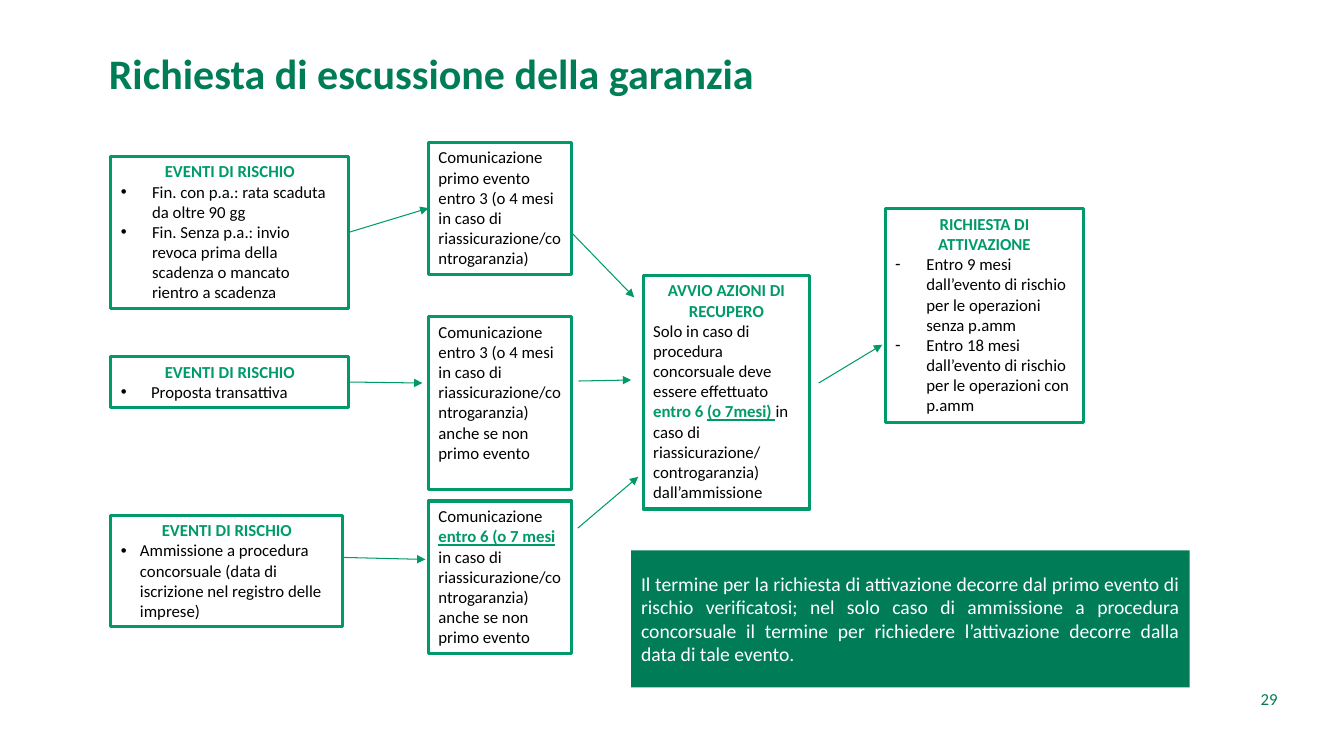
from lxml import etree
from pptx import Presentation
from pptx.dml.color import RGBColor
from pptx.enum.shapes import MSO_CONNECTOR, MSO_SHAPE
from pptx.enum.text import MSO_ANCHOR, PP_ALIGN
from pptx.oxml.ns import qn
from pptx.util import Inches, Pt

RECTANGLE, STRAIGHT = MSO_SHAPE.RECTANGLE, MSO_CONNECTOR.STRAIGHT
TOP, MIDDLE, BOTTOM = MSO_ANCHOR.TOP, MSO_ANCHOR.MIDDLE, MSO_ANCHOR.BOTTOM
LEFT, CENTER, RIGHT, JUSTIFY = PP_ALIGN.LEFT, PP_ALIGN.CENTER, PP_ALIGN.RIGHT, PP_ALIGN.JUSTIFY
LEFT_SIDE, RIGHT_SIDE = 1, 3

FONT = "Calibri"
GREEN, DARK, BLACK, WHITE = "009A6A", "007D57", "000000", "FFFFFF"

TITLE = "Richiesta di escussione della garanzia"
PAGE_NUMBER = "29"
NOTE = ("Il termine per la richiesta di attivazione decorre dal primo evento di rischio "
        "verificatosi; nel solo caso di ammissione a procedura concorsuale il termine per "
        "richiedere l’attivazione decorre dalla data di tale evento.")

# Columns of the flow: left edge and width
EVENT, NOTICE, RECOVERY, REQUEST = (1.1, 2.36), (4.25, 1.42), (6.38, 1.65), (8.78, 1.97)

# name: (column, top, height, heading, bullet, hanging indent, paragraphs)
# A paragraph is a list of runs: (text, highlighted, underlined)
BOXES = {
    "overdue": (EVENT, 1.55, 1.51, "EVENTI DI RISCHIO", "•", 0.31, [
        [("Fin. con p.a.: rata scaduta da oltre 90 gg", False, False)],
        [("Fin. Senza p.a.: invio revoca prima della scadenza o mancato rientro a scadenza",
          False, False)]]),
    "settlement": (EVENT, 3.54, 0.5, "EVENTI DI RISCHIO", "•", 0.3, [
        [("Proposta transattiva", False, False)]]),
    "insolvency": (EVENT[:1] + (2.3,), 5.11, 1.11, "EVENTI DI RISCHIO", "•", 0.19, [
        [("Ammissione a procedura concorsuale (data di iscrizione nel registro delle imprese)",
          False, False)]]),
    "first notice": (NOTICE, 1.41, 1.31, None, None, 0, [
        [("Comunicazione primo evento entro 3 (o 4 mesi in caso di "
          "riassicurazione/controgaranzia)", False, False)]]),
    "second notice": (NOTICE, 3.14, 1.72, None, None, 0, [
        [("Comunicazione entro 3 (o 4 mesi in caso di riassicurazione/controgaranzia) "
          "anche se non primo evento", False, False)]]),
    "third notice": (NOTICE, 4.97, 1.51, None, None, 0, [
        [("Comunicazione ", False, False), ("entro 6 (o 7 mesi ", True, True),
         ("in caso di riassicurazione/controgaranzia) anche se non primo evento",
          False, False)]]),
    "recovery": (RECOVERY, 2.73, 2.32, "AVVIO AZIONI DI RECUPERO", None, 0, [
        [("Solo in caso di procedura concorsuale deve essere effettuato ", False, False),
         ("entro 6 ", True, False), ("(o 7mesi) ", True, True),
         ("in caso di riassicurazione/ controgaranzia) dall’ammissione", False, False)]]),
    "request": (REQUEST, 2.07, 2.12, "RICHIESTA DI ATTIVAZIONE", "-", 0.31, [
        [("Entro 9 mesi dall’evento di rischio per le operazioni senza p.amm", False, False)],
        [("Entro 18 mesi dall’evento di rischio per le operazioni con p.amm", False, False)]]),
}

# Each end is a box name (joined to its side) or a free point
ARROWS = [
    ("overdue", "first notice"),
    ("settlement", (4.19, 3.8)),
    ((3.4, 5.53), (4.22, 5.55)),
    ((5.73, 5.24), (6.33, 4.73)),
    ((5.74, 3.78), (6.26, 3.77)),
    ((5.68, 2.32), (6.29, 2.95)),
    ((8.12, 3.8), (8.75, 3.42)),
]


def rgb(color):
    return RGBColor.from_string(color)


def set_font(font, size, color, bold=False):
    font.name, font.size, font.bold = FONT, Pt(size), bold
    font.color.rgb = rgb(color)


def write_line(frame, text, size, color, align, anchor, bold=False):
    """Fill a text frame with one evenly styled paragraph."""
    frame.word_wrap, frame.vertical_anchor = True, anchor
    para = frame.paragraphs[0]
    para.text, para.alignment = text, align
    set_font(para.font, size, color, bold)


def add_box(shapes, left, top, width, height):
    box = shapes.add_shape(RECTANGLE, *map(Inches, (left, top, width, height)))
    box.shadow.inherit = False
    return box


def add_bullet(para, bullet, indent):
    properties = para._p.get_or_add_pPr()
    properties.set("marL", str(Inches(indent)))
    properties.set("indent", str(-Inches(indent)))
    font = etree.SubElement(properties, qn("a:buFont"))
    font.set("typeface", "Arial")
    etree.SubElement(properties, qn("a:buChar")).set("char", bullet)


def add_flow_box(shapes, column, top, height, heading, bullet, indent, paragraphs):
    box = add_box(shapes, column[0], top, column[1], height)
    box.fill.background()
    box.line.color.rgb, box.line.width = rgb(GREEN), Pt(2.25)
    frame = box.text_frame
    frame.word_wrap, frame.vertical_anchor = True, TOP
    if heading:
        write_line(frame, heading, 12, GREEN, CENTER, TOP, bold=True)
    for number, runs in enumerate(paragraphs):
        para = frame.add_paragraph() if heading or number else frame.paragraphs[0]
        para.alignment = LEFT
        if bullet:
            add_bullet(para, bullet, indent)
        set_font(para.font, 12, BLACK)
        for text, highlighted, underlined in runs:
            span = para.add_run()
            span.text = text
            set_font(span.font, 12, GREEN if highlighted else BLACK, highlighted)
            span.font.underline = underlined
    return box


def add_arrow(shapes, boxes, start, end):
    points = [(0, 0) if isinstance(point, str) else point for point in (start, end)]
    arrow = shapes.add_connector(STRAIGHT, *(Inches(value) for point in points for value in point))
    if start in boxes:
        arrow.begin_connect(boxes[start], RIGHT_SIDE)
    if end in boxes:
        arrow.end_connect(boxes[end], LEFT_SIDE)
    arrow.line.color.rgb, arrow.line.width = rgb(GREEN), Pt(0.75)
    etree.SubElement(arrow.line._get_or_add_ln(), qn("a:tailEnd")).set("type", "triangle")
    etree.SubElement(arrow._element.spPr, qn("a:effectLst"))


def main():
    deck = Presentation()
    deck.slide_width, deck.slide_height = Inches(13.33), Inches(7.5)
    page = deck.slides.add_slide(deck.slide_layouts[5])
    shapes = page.shapes

    title = shapes.title
    title.left, title.top, title.width, title.height = map(Inches, (0.98, 0.42, 11.19, 0.61))
    write_line(title.text_frame, TITLE, 30, DARK, LEFT, MIDDLE, bold=True)

    boxes = {name: add_flow_box(shapes, *content) for name, content in BOXES.items()}
    for start, end in ARROWS:
        add_arrow(shapes, boxes, start, end)

    note = add_box(shapes, 6.26, 5.46, 5.54, 1.36)
    note.fill.solid()
    note.fill.fore_color.rgb = rgb(DARK)
    note.line.fill.background()
    write_line(note.text_frame, NOTE, 14, WHITE, JUSTIFY, MIDDLE)

    number = shapes.add_textbox(*map(Inches, (11.8, 6.82, 0.97, 0.26)))
    write_line(number.text_frame, PAGE_NUMBER, 12, DARK, RIGHT, BOTTOM)

    deck.save("out.pptx")


if __name__ == "__main__":
    main()
